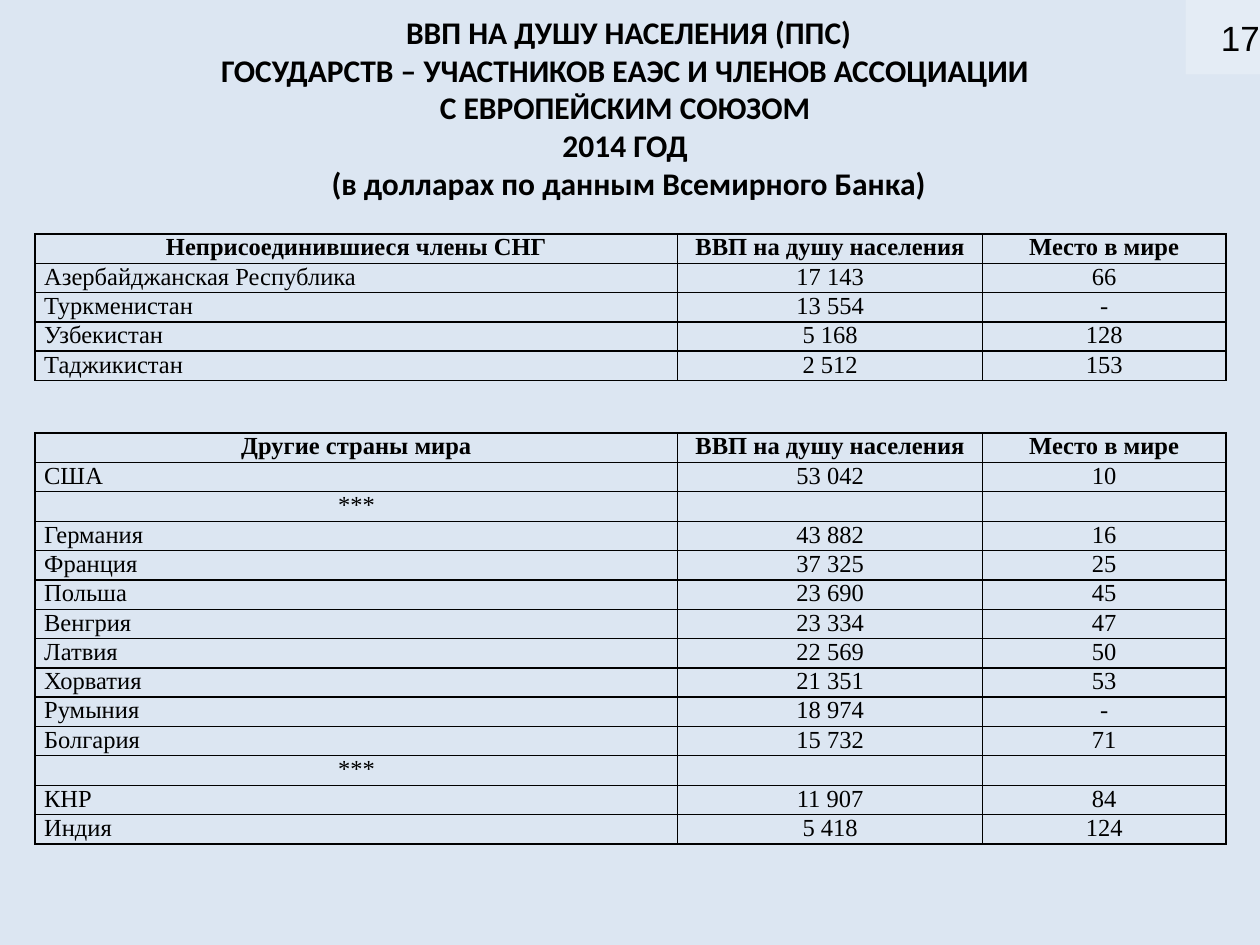
from dataclasses import dataclass

from lxml import etree
from pptx import Presentation
from pptx import util as u
from pptx.dml.color import RGBColor
from pptx.enum import shapes, text
from pptx.oxml import ns

COLOURS = {"background": "DCE6F2", "ink": "000000", "badge": "FFFFFF"}
TABLE_FONT = "Times New Roman"
COLUMN_WIDTHS = (12.95, 6.15, 4.9)
TABLE_LEFT = 0.71
ROW_HEIGHT = 0.59
SEPARATOR = "***"
TITLE_LINES = (
    "ВВП НА ДУШУ НАСЕЛЕНИЯ (ППС)",
    "ГОСУДАРСТВ – УЧАСТНИКОВ ЕАЭС И ЧЛЕНОВ АССОЦИАЦИИ ",
    "С ЕВРОПЕЙСКИМ СОЮЗОМ ",
    "2014 ГОД ",
    "(в долларах по данным Всемирного Банка)",
)


@dataclass
class CountryTable:
    heading: str
    top: float
    rows: tuple


TABLES = (
    CountryTable("Неприсоединившиеся члены СНГ", 4.72, (
        ("Азербайджанская Республика", "17 143", "66"),
        ("Туркменистан", "13 554", "-"),
        ("Узбекистан", "5 168", "128"),
        ("Таджикистан", "2 512", "153"),
    )),
    CountryTable("Другие страны мира", 8.73, (
        ("США", "53 042", "10"),
        (SEPARATOR, "", ""),
        ("Германия", "43 882", "16"),
        ("Франция", "37 325", "25"),
        ("Польша", "23 690", "45"),
        ("Венгрия", "23 334", "47"),
        ("Латвия", "22 569", "50"),
        ("Хорватия", "21 351", "53"),
        ("Румыния", "18 974", "-"),
        ("Болгария", "15 732", "71"),
        (SEPARATOR, "", ""),
        ("КНР", "11 907", "84"),
        ("Индия", "5 418", "124"),
    )),
)


def colour(name: str) -> RGBColor:
    return RGBColor.from_string(COLOURS[name])


def write(para, words: str, *, size: float, font: str, bold: bool = False,
          align=text.PP_ALIGN.CENTER) -> None:
    para.alignment = align
    if not words:
        # An empty paragraph takes its line height from its end mark.
        etree.SubElement(para._p, ns.qn("a:endParaRPr"), sz=str(int(size * 100)))
        return
    span = para.add_run()
    span.text = words
    span.font.size = u.Pt(size)
    span.font.name = font
    span.font.bold = bold
    span.font.color.rgb = colour("ink")


def set_margins(target, side: float = 0) -> None:
    target.margin_left = target.margin_right = u.Cm(side)
    target.margin_top = target.margin_bottom = 0


def add_borders(cell) -> None:
    properties = cell._tc.get_or_add_tcPr()
    for index, side in enumerate(("lnL", "lnR", "lnT", "lnB")):
        line = etree.Element(ns.qn(f"a:{side}"), w=str(u.Pt(1)))
        fill = etree.SubElement(line, ns.qn("a:solidFill"))
        etree.SubElement(fill, ns.qn("a:srgbClr"), val=COLOURS["ink"])
        properties.insert(index, line)


def add_title(page) -> None:
    box = page.shapes.title
    box.left, box.top = u.Cm(0.05), u.Cm(0.13)
    box.width, box.height = u.Cm(25.25), u.Cm(4.11)
    frame = box.text_frame
    frame.word_wrap = True
    frame.auto_size = text.MSO_AUTO_SIZE.NONE
    frame.vertical_anchor = text.MSO_ANCHOR.TOP
    for index, words in enumerate(TITLE_LINES):
        para = frame.add_paragraph() if index else frame.paragraphs[0]
        para.space_before = u.Pt(0)
        write(para, words, size=18, font="Calibri", bold=True)


def add_country_table(page, data: CountryTable) -> None:
    header = (data.heading, "ВВП на душу населения", "Место в мире")
    rows = (header, *data.rows)
    table = page.shapes.add_table(
        len(rows), len(header), u.Cm(TABLE_LEFT), u.Cm(data.top),
        u.Cm(sum(COLUMN_WIDTHS)), u.Cm(ROW_HEIGHT * len(rows))).table
    table.first_row = table.horz_banding = False
    for column, width in zip(table.columns, COLUMN_WIDTHS):
        column.width = u.Cm(width)
    for row_index, row in enumerate(rows):
        for column_index, words in enumerate(row):
            cell = table.cell(row_index, column_index)
            set_margins(cell, 0.18)
            cell.fill.background()
            add_borders(cell)
            is_country = row_index and not column_index and words != SEPARATOR
            write(cell.text_frame.paragraphs[0], words, size=14,
                  font=TABLE_FONT, bold=row_index == 0,
                  align=text.PP_ALIGN.LEFT if is_country else text.PP_ALIGN.CENTER)


def add_page_number(page, number: str, slide_width: float) -> None:
    side = 1.5
    badge = page.shapes.add_shape(shapes.MSO_SHAPE.RECTANGLE,
                                  u.Cm(slide_width - side), 0, u.Cm(side), u.Cm(side))
    badge.shadow.inherit = False
    badge.line.fill.background()
    badge.fill.solid()
    badge.fill.fore_color.rgb = colour("badge")
    swatch = badge._element.spPr.find(".//" + ns.qn("a:srgbClr"))
    etree.SubElement(swatch, ns.qn("a:alpha"), val="25000")
    frame = badge.text_frame
    set_margins(frame)
    frame.vertical_anchor = text.MSO_ANCHOR.MIDDLE
    write(frame.paragraphs[0], number, size=20, font="Arial",
          align=text.PP_ALIGN.RIGHT)


def main() -> None:
    slide_width = 25.4
    deck = Presentation()
    deck.slide_width, deck.slide_height = u.Cm(slide_width), u.Cm(19.05)
    page = deck.slides.add_slide(deck.slide_layouts.get_by_name("Title Only"))
    page.background.fill.solid()
    page.background.fill.fore_color.rgb = colour("background")
    add_title(page)
    for data in TABLES:
        add_country_table(page, data)
    add_page_number(page, "17", slide_width)
    deck.save("out.pptx")


if __name__ == "__main__":
    main()
